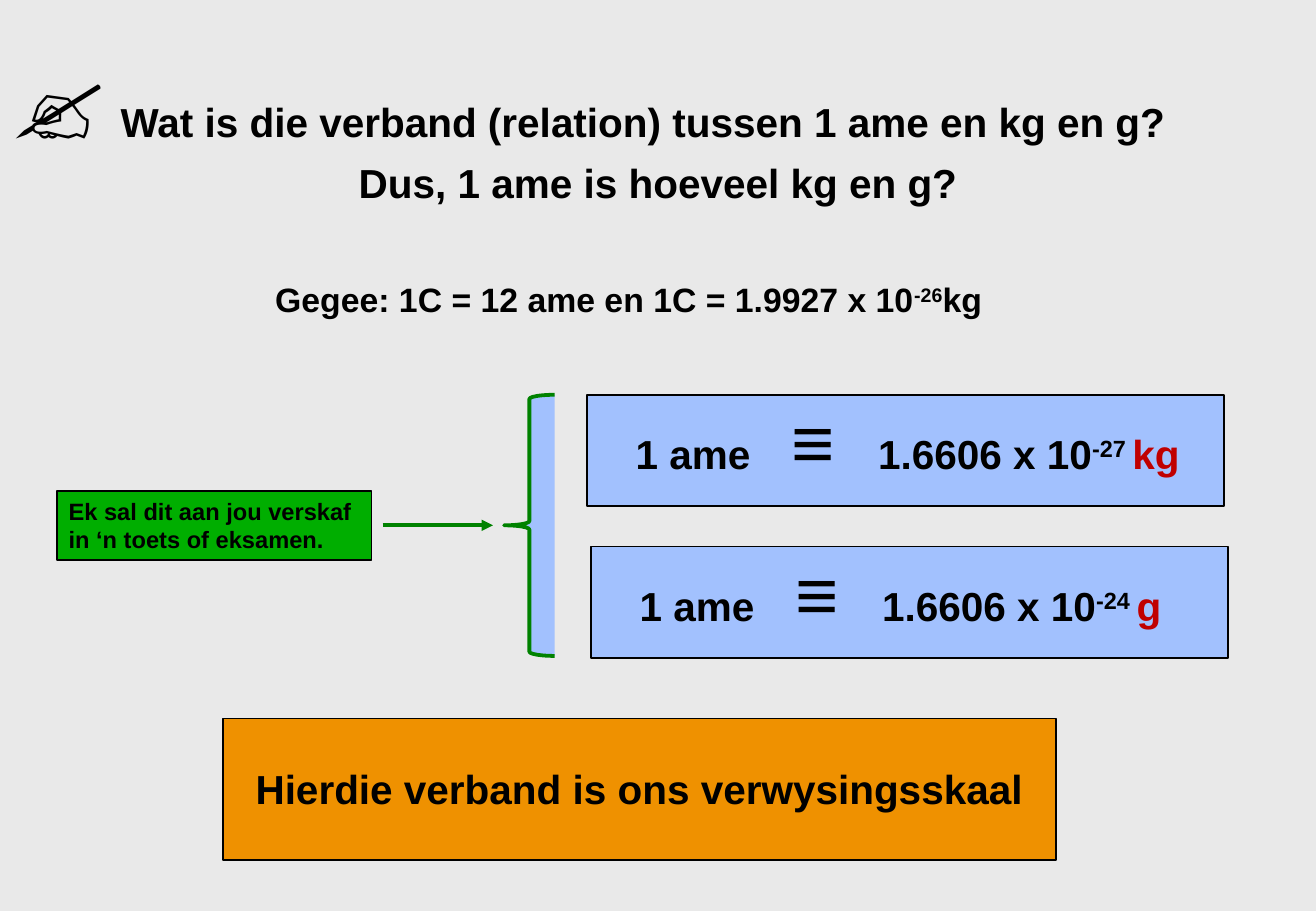
from lxml import etree
from pptx import Presentation
from pptx.dml.color import RGBColor
from pptx.enum.shapes import MSO_CONNECTOR, MSO_SHAPE
from pptx.enum.text import MSO_ANCHOR, MSO_AUTO_SIZE, PP_ALIGN
from pptx.oxml.ns import qn
from pptx.util import Pt

PX = 7620  # 120 px to the inch
LEFT, CENTER = PP_ALIGN.LEFT, PP_ALIGN.CENTER
TOP, MIDDLE = MSO_ANCHOR.TOP, MSO_ANCHOR.MIDDLE
RECTANGLE, LEFT_BRACE = MSO_SHAPE.RECTANGLE, MSO_SHAPE.LEFT_BRACE
STRAIGHT = MSO_CONNECTOR.STRAIGHT
NO_AUTOFIT = MSO_AUTO_SIZE.NONE
TITLE_ONLY = 5

GREY, BLACK, RED = "E9E9E9", "000000", "C00000"
BLUE, ORANGE, GREEN, DARK_GREEN = "A2C1FE", "EF9100", "00AE00", "008200"


def px(*lengths):
    return [length * PX for length in lengths]


def rgb(color):
    return RGBColor.from_string(color)


def write(paragraph, text, size=24, color=BLACK, font="Arial", raised=False):
    run = paragraph.add_run()
    run.text = text
    run.font.name, run.font.size, run.font.bold = font, Pt(size), True
    run.font.color.rgb = rgb(color)
    if raised:
        run._r.get_or_add_rPr().set("baseline", "30000")


def frame_paragraph(frame, align=LEFT, anchor=TOP, wrap=True, before=0):
    """Format a text frame and return its first paragraph."""
    frame.word_wrap, frame.auto_size = wrap, NO_AUTOFIT
    frame.vertical_anchor = anchor
    paragraph = frame.paragraphs[0]
    paragraph.alignment, paragraph.space_before = align, Pt(before)
    return paragraph


def text_line(slide, box, align=LEFT):
    frame = slide.shapes.add_textbox(*px(*box)).text_frame
    return frame_paragraph(frame, align, before=2.5)


def panel(slide, box, fill, kind=RECTANGLE, line=BLACK, width=1):
    shape = slide.shapes.add_shape(kind, *px(*box))
    shape.shadow.inherit = False
    shape.fill.solid()
    shape.fill.fore_color.rgb = rgb(fill)
    shape.line.color.rgb = rgb(line)
    shape.line.width = Pt(width)
    return shape


def arrow(slide, start, end):
    connector = slide.shapes.add_connector(STRAIGHT, *px(*start, *end))
    connector.line.color.rgb = rgb(DARK_GREEN)
    connector.line.width = Pt(2.25)
    line = connector.line._get_or_add_ln()
    etree.SubElement(line, qn("a:tailEnd"), type="triangle")
    etree.SubElement(connector._element.spPr, qn("a:effectLst"))


def question(slide, box):
    title = slide.shapes.title
    title.left, title.top, title.width, title.height = px(*box)
    first = frame_paragraph(title.text_frame)
    write(first, "✍", size=60, font="Lato")
    write(first, " ", size=40, font="Lato")
    write(first, "Wat is die verband (relation) tussen 1 ame en kg en g?")
    second = title.text_frame.add_paragraph()
    second.alignment = CENTER
    write(second, "Dus, 1 ame is hoeveel kg en g?")


def given(slide, box):
    line = text_line(slide, box)
    write(line, "Gegee: 1C = 12 ame en 1C = 1.9927 x 10", size=20)
    write(line, "-26", size=20, raised=True)
    write(line, "kg", size=20)


def equivalence(slide, box, exponent, unit):
    left, top, width, height = box
    panel(slide, box, BLUE)
    line = text_line(slide, (left + 36, top - 5, width + 15, height - 9))
    write(line, "1 ame")
    write(line, "  ≡ ", size=44)
    write(line, "  1.6606 x 10")
    write(line, exponent + " ", raised=True)
    write(line, unit, color=RED)


def exam_note(slide, box):
    """Green note, with an arrow to the brace around the two equivalences."""
    left, top, width, height = box
    label = panel(slide, (left, top, 311, height), GREEN)
    line = frame_paragraph(label.text_frame, anchor=MIDDLE, wrap=False)
    write(line, "Ek sal dit aan jou verskaf ", size=14)
    line.add_line_break()
    write(line, "in ‘n toets of eksamen.", size=14)
    middle = top + height // 2
    arrow(slide, (left + 322, middle), (left + 431, middle))
    panel(slide, (left + width - 50, middle - 129, 50, 258), BLUE,
          kind=LEFT_BRACE, line=DARK_GREEN, width=2.25)


def conclusion(slide, box):
    left, top, width, _ = box
    panel(slide, box, ORANGE)
    line = text_line(slide, (left - 10, top + 39, width + 20, 61), CENTER)
    write(line, "Hierdie verband is ons verwysingsskaal")


def main():
    deck = Presentation()
    deck.slide_width, deck.slide_height = px(1300, 900)
    slide = deck.slides.add_slide(deck.slide_layouts[TITLE_ONLY])
    slide.background.fill.solid()
    slide.background.fill.fore_color.rgb = rgb(GREY)

    question(slide, (0, 30, 1300, 230))
    given(slide, (260, 270, 920, 53))
    for row, (exponent, unit) in enumerate([("-27", "kg"), ("-24", "g")]):
        box = (580 + 4 * row, 390 + 150 * row, 629, 110)
        equivalence(slide, box, exponent, unit)
    conclusion(slide, (220, 710, 823, 140))
    exam_note(slide, (56, 485, 492, 68))
    deck.save("out.pptx")


if __name__ == "__main__":
    main()
